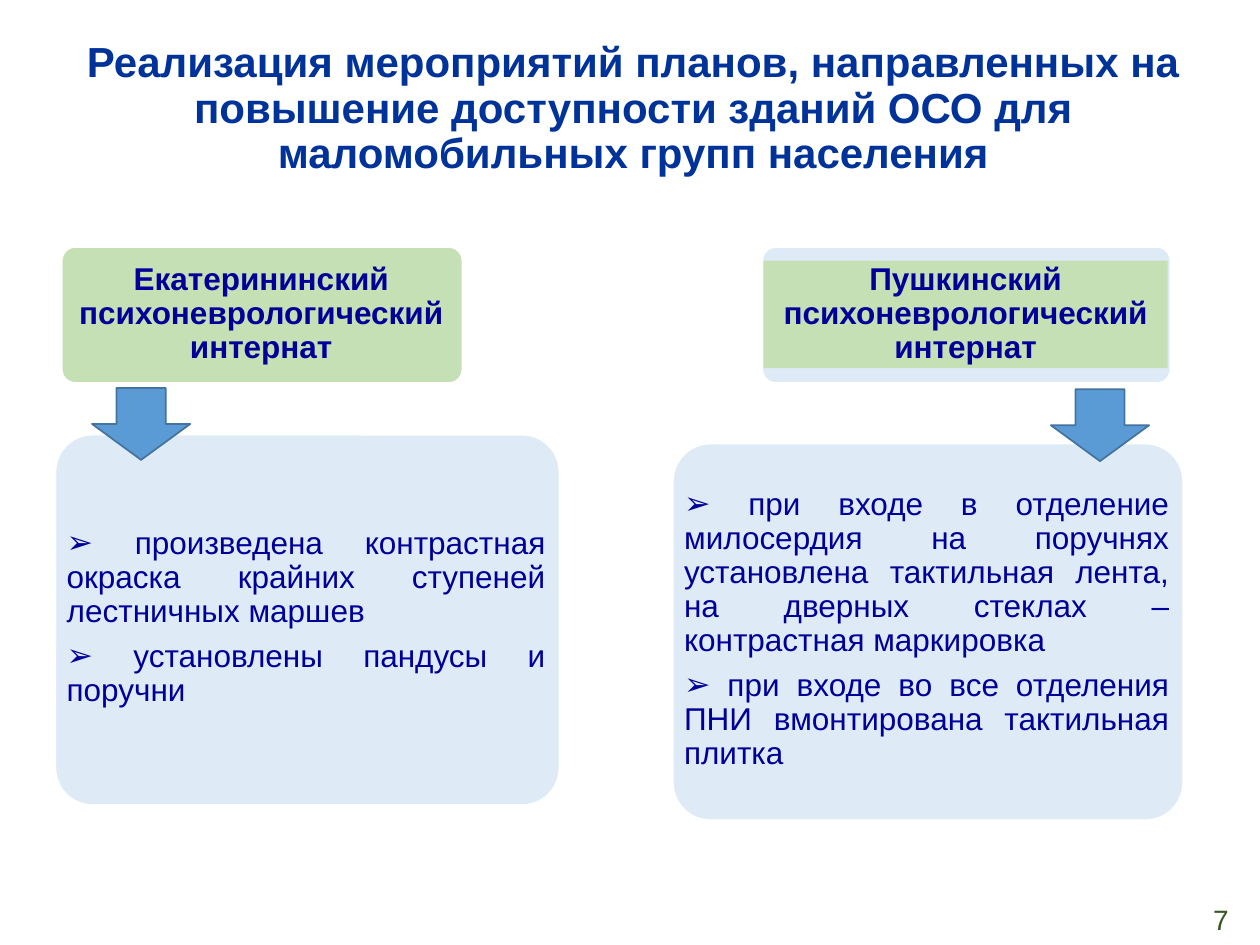
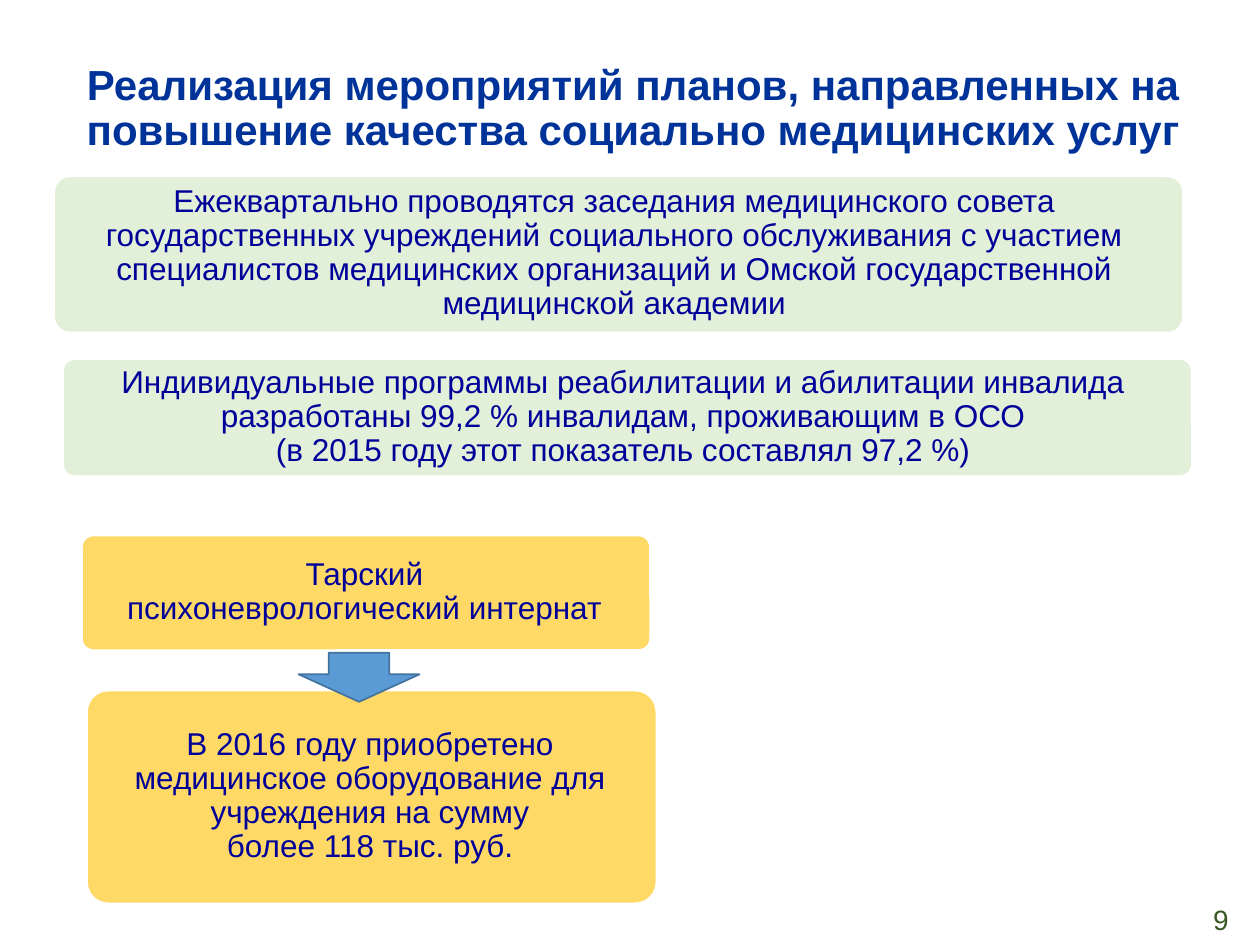
from lxml import etree
from pptx import Presentation
from pptx import util as u
from pptx.dml.color import RGBColor
from pptx.enum import shapes, text
from pptx.oxml import ns

FONT = "Arial"
NAVY, BLUE, LEAF = "000099", "003399", "385723"
GREEN, MINT, PALE, GOLD = "C5E0B4", "E2F0D9", "DEEBF7", "FFD966"
SKY, STEEL, WHITE = "5B9BD5", "43739E", "FFFFFF"
KIND = shapes.MSO_SHAPE
MID, LEFT, RIGHT, FULL = (text.PP_ALIGN.CENTER, text.PP_ALIGN.LEFT,
                          text.PP_ALIGN.RIGHT, text.PP_ALIGN.JUSTIFY)


def color(code):
    """Turn a hex string into a colour."""
    return RGBColor.from_string(code)


def inches(box):
    """Turn a box of numbers into lengths."""
    return [u.Inches(n) for n in box]


def shape(slide, kind, box, fill, line=None):
    """Draw a flat preset shape."""
    item = slide.shapes.add_shape(kind, *inches(box))
    item.shadow.inherit = False
    item.fill.solid()
    item.fill.fore_color.rgb = color(fill)
    if line:
        item.line.color.rgb = color(line)
        item.line.width = u.Pt(1)
    else:
        item.line.fill.background()
    return item


def write(frame, lines, size, ink, align=MID, bold=False, gap=0, space=0.9, mark=None):
    """Fill a text frame with paragraphs of one style."""
    frame.word_wrap = True
    frame.vertical_anchor = text.MSO_ANCHOR.MIDDLE
    for i, words in enumerate(lines):
        para = frame.add_paragraph() if i else frame.paragraphs[0]
        para.text = words
        para.alignment = align
        para.line_spacing = space
        para.space_after = u.Pt(gap)
        if mark:
            props = para._p.get_or_add_pPr()
            etree.SubElement(props, ns.qn("a:buFont"), typeface=FONT)
            etree.SubElement(props, ns.qn("a:buChar"), char=mark)
        font = para.font
        font.name, font.size, font.bold = FONT, u.Pt(size), bold
        font.color.rgb = color(ink)


def page(deck, title, number):
    """Add a slide with its title and page number."""
    slide = deck.slides.add_slide(deck.slide_layouts[6])
    head = slide.shapes.add_textbox(*inches((0.43, 0.36, 9.19, 1.02)))
    write(head.text_frame, [title], 24, BLUE, bold=True)
    foot = slide.shapes.add_textbox(*inches((7.6, 7.1, 2.25, 0.4)))
    write(foot.text_frame, [number], 16, LEAF, RIGHT, space=1)
    return slide


def card(slide, box, fill, lines, band=None, **style):
    """Draw a rounded card with a text band inside it."""
    x, y, w, h = box
    shape(slide, KIND.ROUNDED_RECTANGLE, box, fill, WHITE).adjustments[0] = 0.1
    inner = (x + 0.01, y + 0.1 * h, 0.99 * w, 0.79 * h)
    frame = shape(slide, KIND.RECTANGLE, inner, band or fill).text_frame
    frame.margin_left = frame.margin_right = u.Inches(0.08)
    frame.margin_top = frame.margin_bottom = u.Inches(0.08)
    write(frame, lines, 18, NAVY, gap=6.3, **style)


def arrow(slide, box):
    """Draw a down arrow."""
    return shape(slide, KIND.DOWN_ARROW, box, SKY, STEEL)


def access(deck):
    """Build the slide on access to buildings."""
    slide = page(deck, "Реализация мероприятий планов, направленных на повышение "
                 "доступности зданий ОСО для маломобильных групп населения", "7")
    homes = [
        ("Екатерининский", GREEN, (0.49, 1.96, 3.18, 1.08),
         (0.44, 3.45, 4, 2.94), (0.73, 3.08, 0.78, 0.57),
         [" произведена контрастная окраска крайних ступеней лестничных маршев",
          " установлены пандусы и поручни"]),
        ("Пушкинский", PALE, (6.05, 1.96, 3.24, 1.08),
         (5.34, 3.52, 4.05, 2.99), (8.34, 3.09, 0.78, 0.57),
         [" при входе в отделение милосердия на поручнях установлена "
          "тактильная лента, на дверных стеклах – контрастная маркировка",
          " при входе во все отделения ПНИ вмонтирована тактильная плитка"]),
    ]
    for name, fill, top, body, tip, works in homes:
        card(slide, top, fill, [name + " психоневрологический интернат"],
             band=GREEN, bold=True)
        card(slide, body, PALE, works, align=FULL, mark="➢")
        arrow(slide, tip)


def care(deck):
    """Build the slide on quality of care."""
    slide = page(deck, "Реализация мероприятий планов, направленных на повышение "
                 "качества социально медицинских услуг", "9")
    cards = [
        ((0.65, 4.25, 4.51, 0.91), GOLD, "Тарский\nпсихоневрологический интернат"),
        ((0.69, 5.48, 4.52, 1.69), GOLD,
         "В 2016 году приобретено медицинское оборудование для учреждения "
         "на сумму\nболее 118 тыс. руб."),
        ((0.43, 1.4, 8.96, 1.24), MINT,
         "Ежеквартально проводятся заседания медицинского совета "
         "государственных учреждений социального обслуживания с участием "
         "специалистов медицинских организаций и Омской государственной "
         "медицинской академии"),
        ((0.5, 2.85, 8.96, 0.93), MINT,
         "Индивидуальные программы реабилитации и абилитации инвалида "
         "разработаны 99,2 % инвалидам, проживающим в ОСО\n"
         "(в 2015 году этот показатель составлял 97,2 %)"),
    ]
    for box, fill, words in cards:
        card(slide, box, fill, [words])
    arrow(slide, (2.37, 5.18, 0.96, 0.39)).adjustments[1] = 0.56


def main():
    """Build and save the deck."""
    deck = Presentation()
    deck.slide_width, deck.slide_height = inches((10, 7.5))
    access(deck)
    care(deck)
    deck.save("out.pptx")


if __name__ == "__main__":
    main()
